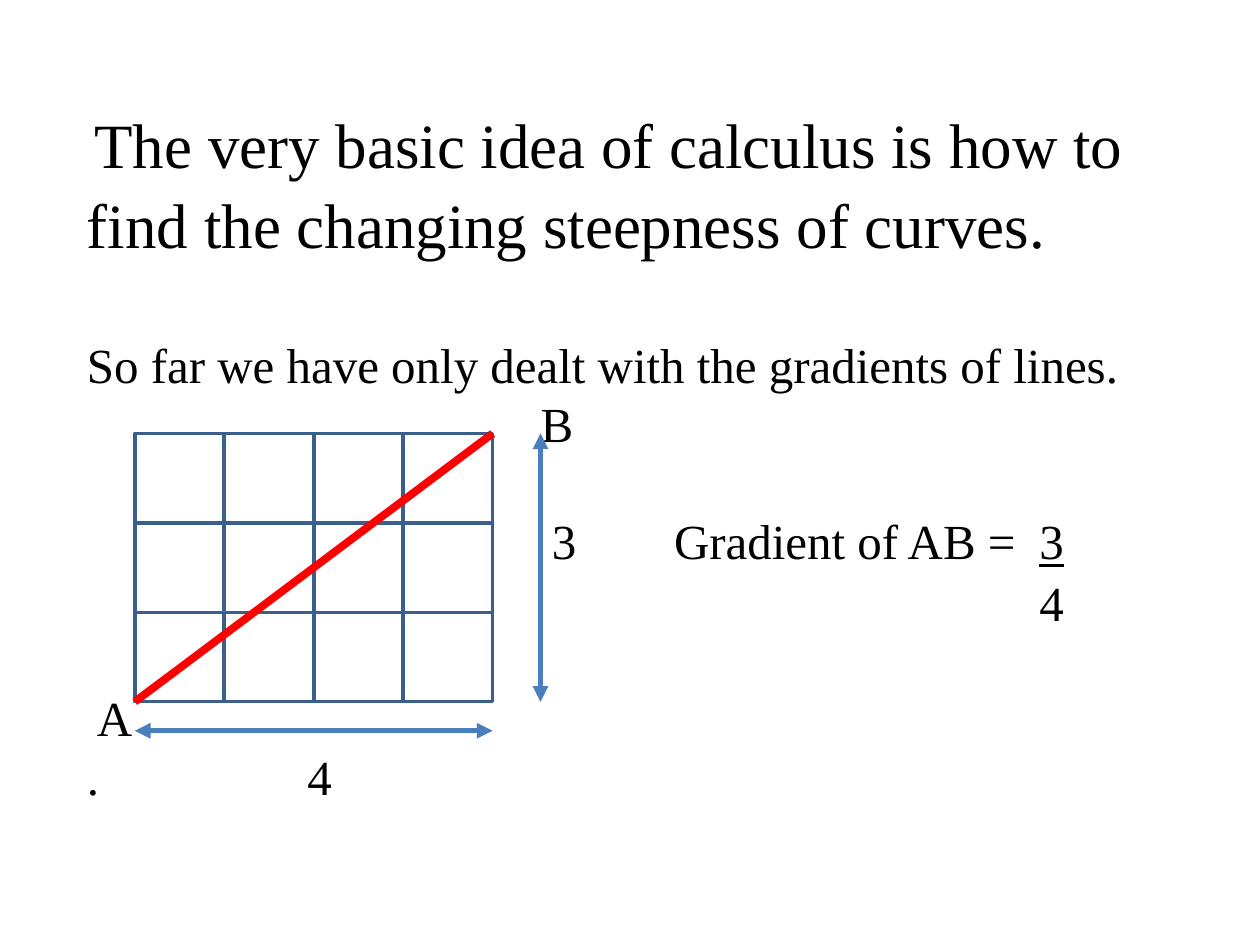
from dataclasses import dataclass

from lxml import etree
from pptx import Presentation
from pptx.dml.color import RGBColor
from pptx.enum.shapes import MSO_CONNECTOR as Connector, MSO_SHAPE as Shape
from pptx.enum.text import MSO_ANCHOR as Anchor, MSO_AUTO_SIZE as AutoSize, PP_ALIGN as Align
from pptx.oxml.ns import qn
from pptx.util import Inches, Pt


@dataclass(frozen=True)
class Theme:
    font: str = "Times New Roman"
    title_size: int = 36
    body_size: int = 28
    ink: str = "000000"
    cell: str = "FFFFFF"
    grid: str = "3A5F8C"
    slope: str = "FF0000"
    measure: str = "4B7EBC"


theme = Theme()


def write(box, text, size, left, top, width, height):
    """Place a text shape without insets and format all its paragraphs."""
    box.left, box.top = Inches(left), Inches(top)
    box.width, box.height = Inches(width), Inches(height)
    frame = box.text_frame
    frame.text = text
    frame.word_wrap = True
    frame.auto_size = AutoSize.NONE
    frame.vertical_anchor = Anchor.TOP
    frame.margin_left = frame.margin_right = frame.margin_top = frame.margin_bottom = 0
    for para in frame.paragraphs:
        para.alignment = Align.LEFT
        para.line_spacing = 1.05
        para.space_before = Pt(0)
        for span in para.runs:
            span.font.name = theme.font
            span.font.size = Pt(size)
            span.font.color.rgb = RGBColor.from_string(theme.ink)
    return frame.paragraphs


def draw_line(start, end, color, width, arrows=False):
    """Draw a straight line, optionally with a triangle at both ends."""
    line = page.shapes.add_connector(Connector.STRAIGHT, *map(Inches, start + end))
    line.line.color.rgb = RGBColor.from_string(color)
    line.line.width = Pt(width)
    if arrows:
        for tag in ("a:headEnd", "a:tailEnd"):
            etree.SubElement(line.line._get_or_add_ln(), qn(tag), type="triangle")
    etree.SubElement(line._element.spPr, qn("a:effectLst"))


deck = Presentation()
deck.slide_width, deck.slide_height = Inches(10), Inches(7.5)
page = deck.slides.add_slide(deck.slide_layouts[1])

# Heading and sentence
text_left, text_width = 0.69, 8.4
heading = write(page.shapes.title,
                "The very basic idea of calculus is how to find the changing steepness of curves.",
                theme.title_size, text_left, 0.81, text_width, 1.3)
heading[0]._p.get_or_add_pPr().set("indent", str(Inches(0.06)))

line_top, line_height = 2.63, 0.467
sentence = write(page.placeholders[1], "So far we have only dealt with the gradients of lines.",
                 theme.body_size, text_left, line_top, text_width, line_height)
properties = sentence[0]._p.get_or_add_pPr()
properties.set("marL", "0")
properties.set("indent", "0")
etree.SubElement(properties, qn("a:buNone"))

# Labels: text, left edge, text line below the sentence, width
labels = [
    ("B", 4.29, 1, 0.4),
    ("3", 4.38, 3, 0.4),
    ("Gradient of AB =", 5.35, 3, 2.8),
    ("3\n4", 8.25, 3, 0.4),
    ("A", 0.77, 6, 0.4),
    (".", 0.69, 7, 0.3),
    ("4", 2.44, 7, 0.4),
]
for text, left, row, width in labels:
    box = page.shapes.add_textbox(0, 0, 0, 0)
    paras = write(box, text, theme.body_size, left, line_top + row * line_height,
                  width, line_height * (text.count("\n") + 1))
    if len(paras) > 1:  # the numerator carries the fraction bar
        paras[0].runs[0].font.underline = True

# Grid of unit squares
columns, rows, side = 4, 3, 0.71
grid_left, grid_top = 1.07, 3.44
grid_right, grid_bottom = grid_left + columns * side, grid_top + rows * side
for row in range(rows):
    for column in range(columns):
        square = page.shapes.add_shape(
            Shape.RECTANGLE, Inches(grid_left + column * side), Inches(grid_top + row * side),
            Inches(side), Inches(side))
        square.shadow.inherit = False
        square.fill.solid()
        square.fill.fore_color.rgb = RGBColor.from_string(theme.cell)
        square.line.color.rgb = RGBColor.from_string(theme.grid)
        square.line.width = Pt(2)

# Line AB and the two measuring arrows
draw_line((grid_left, grid_bottom), (grid_right, grid_top), theme.slope, 4.5)
draw_line((grid_left, 5.8), (grid_right, 5.8), theme.measure, 3, arrows=True)
draw_line((4.29, grid_top), (4.29, grid_bottom), theme.measure, 3, arrows=True)

deck.save("out.pptx")
